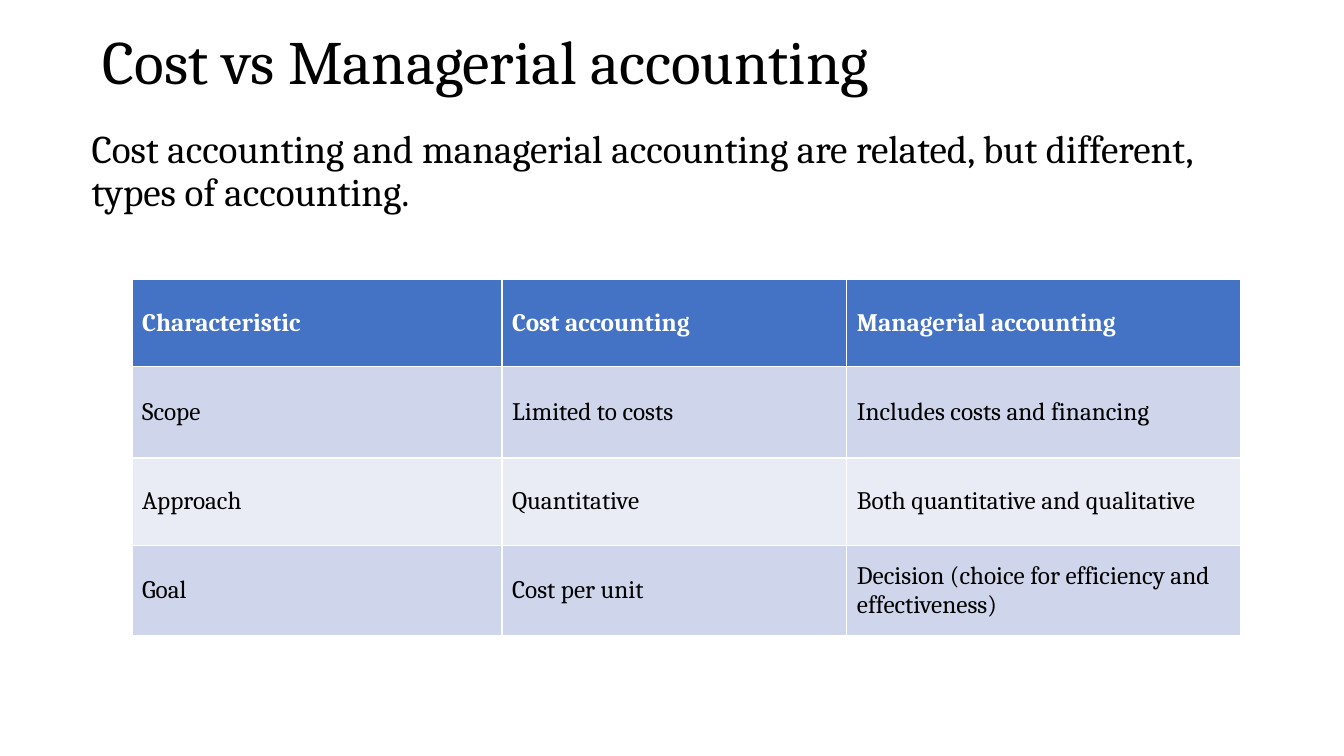
from pptx import Presentation
from pptx.dml.color import RGBColor
from pptx.enum.text import MSO_ANCHOR, PP_ALIGN
from pptx.util import Inches, Pt

FONT = "Cambria"
BLACK = RGBColor(0x00, 0x00, 0x00)
WHITE = RGBColor(0xFF, 0xFF, 0xFF)
HEADER_BLUE = RGBColor(0x44, 0x72, 0xC4)
BAND_DARK = RGBColor(0xCF, 0xD5, 0xEA)
BAND_LIGHT = RGBColor(0xE9, 0xEB, 0xF5)

COLUMN_WIDTHS = (3.67, 3.42, 3.91)
ROW_HEIGHTS = (0.87, 0.91, 0.87, 0.9)
COMPARISON = (
    ("Characteristic", "Cost accounting", "Managerial accounting"),
    ("Scope", "Limited to costs", "Includes costs and financing"),
    ("Approach", "Quantitative", "Both quantitative and qualitative"),
    ("Goal", "Cost per unit", "Decision (choice for efficiency and effectiveness)"),
)


def write_text(text_frame, text, size, color=BLACK, bold=False):
    """Fill a text frame with one left-aligned paragraph and return it."""
    text_frame.text = text
    text_frame.word_wrap = True
    paragraph = text_frame.paragraphs[0]
    paragraph.alignment = PP_ALIGN.LEFT
    font = paragraph.runs[0].font
    font.name = FONT
    font.size = Pt(size)
    font.bold = bold
    font.color.rgb = color
    return paragraph


def place_title(slide, left, top, width, height, text):
    """Move the title placeholder into the box and write the heading."""
    title = slide.shapes.title
    title.left, title.top = Inches(left), Inches(top)
    title.width, title.height = Inches(width), Inches(height)
    paragraph = write_text(title.text_frame, text, 44)
    paragraph.line_spacing = 0.9
    title.text_frame.vertical_anchor = MSO_ANCHOR.MIDDLE


def add_introduction(slide, left, top, width, height, text):
    """Add the introductory sentence in the box."""
    introduction = slide.shapes.add_textbox(
        Inches(left), Inches(top), Inches(width), Inches(height))
    paragraph = write_text(introduction.text_frame, text, 28)
    paragraph.line_spacing = 0.9
    paragraph.space_before = Pt(10)


def add_comparison_table(slide, left, top, width, height):
    """Add the comparison table with a header row and banded rows."""
    table = slide.shapes.add_table(
        len(COMPARISON), len(COLUMN_WIDTHS),
        Inches(left), Inches(top), Inches(width), Inches(height)).table
    for column, share in zip(table.columns, COLUMN_WIDTHS):
        column.width = Inches(width * share / sum(COLUMN_WIDTHS))
    for row, share in zip(table.rows, ROW_HEIGHTS):
        row.height = Inches(height * share / sum(ROW_HEIGHTS))
    for row_index, texts in enumerate(COMPARISON):
        is_header = row_index == 0
        band = BAND_DARK if row_index % 2 else BAND_LIGHT
        for column_index, text in enumerate(texts):
            cell = table.cell(row_index, column_index)
            cell.fill.solid()
            cell.fill.fore_color.rgb = HEADER_BLUE if is_header else band
            cell.vertical_anchor = MSO_ANCHOR.MIDDLE
            write_text(cell.text_frame, text, 18,
                       WHITE if is_header else BLACK, is_header)


def main():
    """Build the slide and save the presentation."""
    presentation = Presentation()
    presentation.slide_width = Inches(13.33)
    presentation.slide_height = Inches(7.5)
    slide = presentation.slides.add_slide(presentation.slide_layouts[5])
    place_title(slide, 0.92, 0.25, 11.5, 0.78, "Cost vs Managerial accounting")
    add_introduction(
        slide, 0.81, 1.24, 11.5, 5.5,
        "Cost accounting and managerial accounting are related, "
        "but different, types of accounting.")
    add_comparison_table(slide, 1.31, 2.77, 11, 3.54)
    presentation.save("out.pptx")


if __name__ == "__main__":
    main()
